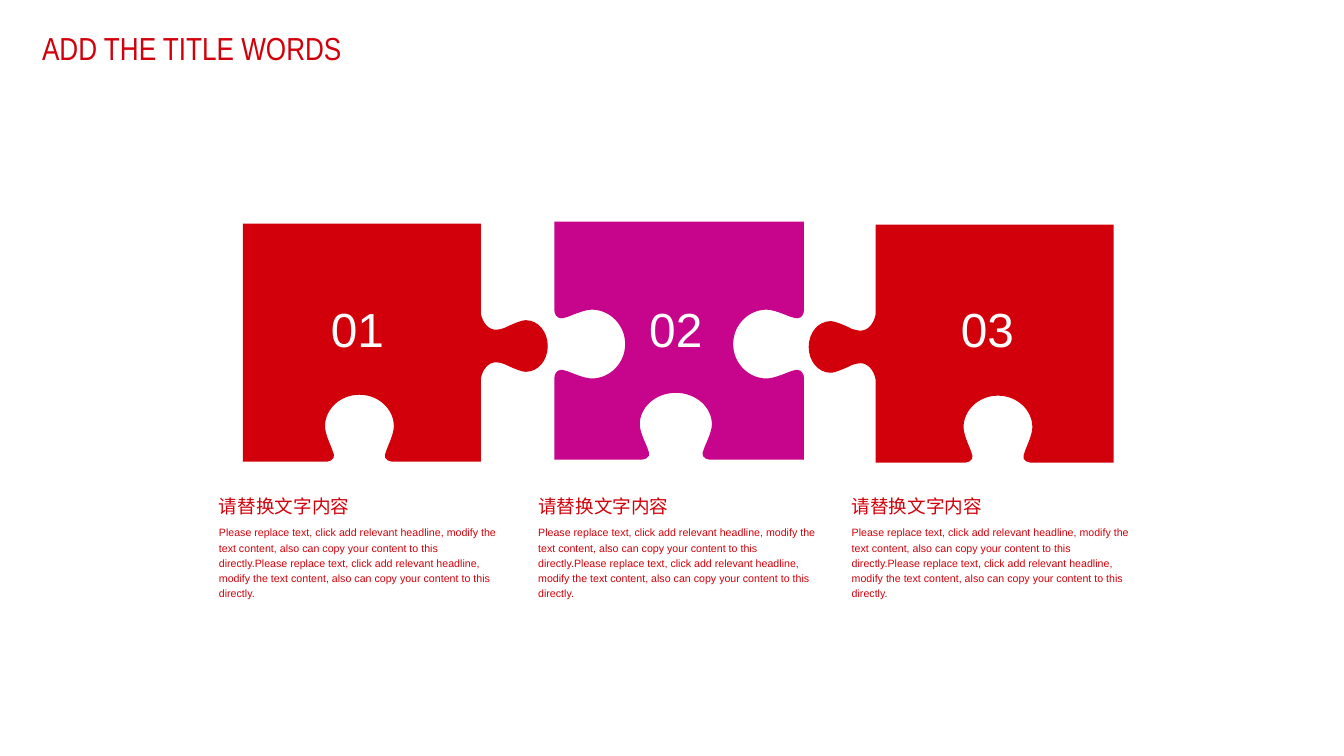
"""Build a slide with three puzzle pieces and a caption under each."""
from lxml import etree
from pptx import Presentation
from pptx.dml.color import RGBColor
from pptx.enum import text as t
from pptx.oxml import ns
from pptx.util import Inches, Pt

RED = RGBColor(0xD1, 0x00, 0x0A)
PINK = RGBColor(0xC7, 0x05, 0x8C)
WHITE = RGBColor(0xFF, 0xFF, 0xFF)

SIDE = 2.49
MID = 1.28
HEAD = "请替换文字内容"
BODY = ("Please replace text, click add relevant headline, modify the text content, "
        "also can copy your content to this directly.") * 2

TAB = [(-.34, 0), (-.24, .02), (-.17, .08), (-.17, .16),
       (-.17, .19), (-.18, .22), (-.19, .25),
       (-.22, .31), (-.27, .42), (-.27, .47),
       (-.27, .6), (-.15, .7), (0, .7)]
SOCKET = [(-.35, 0), (-.32, 0), (-.27, -.02), (-.27, -.07),
          (-.27, -.08), (-.27, -.1), (-.28, -.12),
          (-.28, -.14), (-.36, -.3), (-.36, -.39),
          (-.36, -.58), (-.2, -.74), (0, -.74)]
NOTCH = [(-.34, 0), (-.31, 0), (-.28, -.02), (-.27, -.04),
         (-.26, -.06), (-.27, -.09), (-.28, -.11),
         (-.28, -.13), (-.36, -.28), (-.36, -.37),
         (-.36, -.55), (-.2, -.7), (0, -.7)]

PIECES = [
    dict(left=2.54, top=2.34, width=SIDE, notch=1.22, color=RED, east=TAB),
    dict(left=5.8, top=2.32, width=2.61, notch=1.27, color=PINK, east=SOCKET, west=SOCKET),
    dict(left=9.16, top=2.35, width=SIDE, notch=1.28, color=RED, west=TAB),
]
LABELS = [("01", 3.29, 2.29), ("02", 6.62, 5.63), ("03", 9.88, 8.91)]


def corner(x, y):
    """Return a straight step to (x, y) as a cubic triple."""
    return [(x, y)] * 3


def knob(half, x, y, out, stretch=1):
    """Return the cubic triples of a mirrored edge curve around (x, y)."""
    if not half:
        return []
    ox, oy = out
    curve = half + [(-a, b) for a, b in half[-2::-1]]
    pts = [(x - oy * a * stretch + ox * b, y + ox * a * stretch + oy * b)
           for a, b in curve]
    return corner(*pts[0]) + pts[1:]


def bend(shape):
    """Join each three line steps of a freeform into one cubic curve."""
    lines = list(shape.element.iter(ns.qn("a:lnTo")))
    for i in range(0, len(lines), 3):
        curve = etree.Element(ns.qn("a:cubicBezTo"))
        lines[i].addprevious(curve)
        for line in lines[i:i + 3]:
            curve.append(line[0])
            line.getparent().remove(line)


def add_piece(slide, left, top, width, notch, color, east=None, west=None):
    """Draw one puzzle piece clockwise from its top left corner."""
    right, base, mid = left + width, top + SIDE, top + MID
    pts = corner(right, top)
    pts += knob(east, right, mid, (1, 0))
    pts += corner(right, base)
    pts += knob(NOTCH, left + notch, base, (0, 1), width / SIDE)
    pts += corner(left, base)
    pts += knob(west, left, mid, (-1, 0))
    pen = slide.shapes.build_freeform(Inches(left), Inches(top))
    pen.add_line_segments([(Inches(x), Inches(y)) for x, y in pts], close=True)
    shape = pen.convert_to_shape()
    bend(shape)
    shape.shadow.inherit = False
    shape.fill.solid()
    shape.fill.fore_color.rgb = color
    shape.line.fill.background()


def set_text(shape, words, size, color, font="Arial", space=1.0,
             align=t.PP_ALIGN.LEFT, wrap=True):
    """Fill a shape with one formatted paragraph."""
    frame = shape.text_frame
    frame.text = words
    frame.word_wrap = wrap
    frame.auto_size = t.MSO_AUTO_SIZE.SHAPE_TO_FIT_TEXT
    frame.vertical_anchor = t.MSO_ANCHOR.TOP
    para = frame.paragraphs[0]
    para.alignment = align
    para.line_spacing = space
    face = para.runs[0].font
    face.size, face.name = Pt(size), font
    face.color.rgb = color


def add_box(slide, left, top, width, height):
    """Add an empty text box."""
    return slide.shapes.add_textbox(*map(Inches, (left, top, width, height)))


def add_note(slide, left, top, width, height, words, size):
    """Add a red caption text without margins."""
    box = add_box(slide, left, top, width, height)
    frame = box.text_frame
    frame.margin_left = frame.margin_right = frame.margin_top = frame.margin_bottom = 0
    set_text(box, words, size, RED, space=1.2)


def add_title(slide):
    """Place and format the title."""
    title = slide.shapes.title
    title.left, title.top = Inches(.34), Inches(.05)
    title.width, title.height = Inches(3.54), Inches(.63)
    set_text(title, "ADD THE TITLE WORDS", 24, RED, "Arial Narrow", 1.5)


def main():
    """Build and save the slide."""
    deck = Presentation()
    deck.slide_width, deck.slide_height = Inches(14.06), Inches(7.91)
    slide = deck.slides.add_slide(deck.slide_layouts[5])
    add_title(slide)
    for piece in PIECES:
        add_piece(slide, **piece)
    for num, x, left in LABELS:
        box = add_box(slide, x, 3.09, .9, .71)
        set_text(box, num, 36, WHITE, align=t.PP_ALIGN.CENTER, wrap=False)
        add_note(slide, left, 5.13, 1.55, .26, HEAD, 14)
        add_note(slide, left, 5.48, 2.95, .81, BODY, 8)
    deck.save("out.pptx")


if __name__ == "__main__":
    main()
